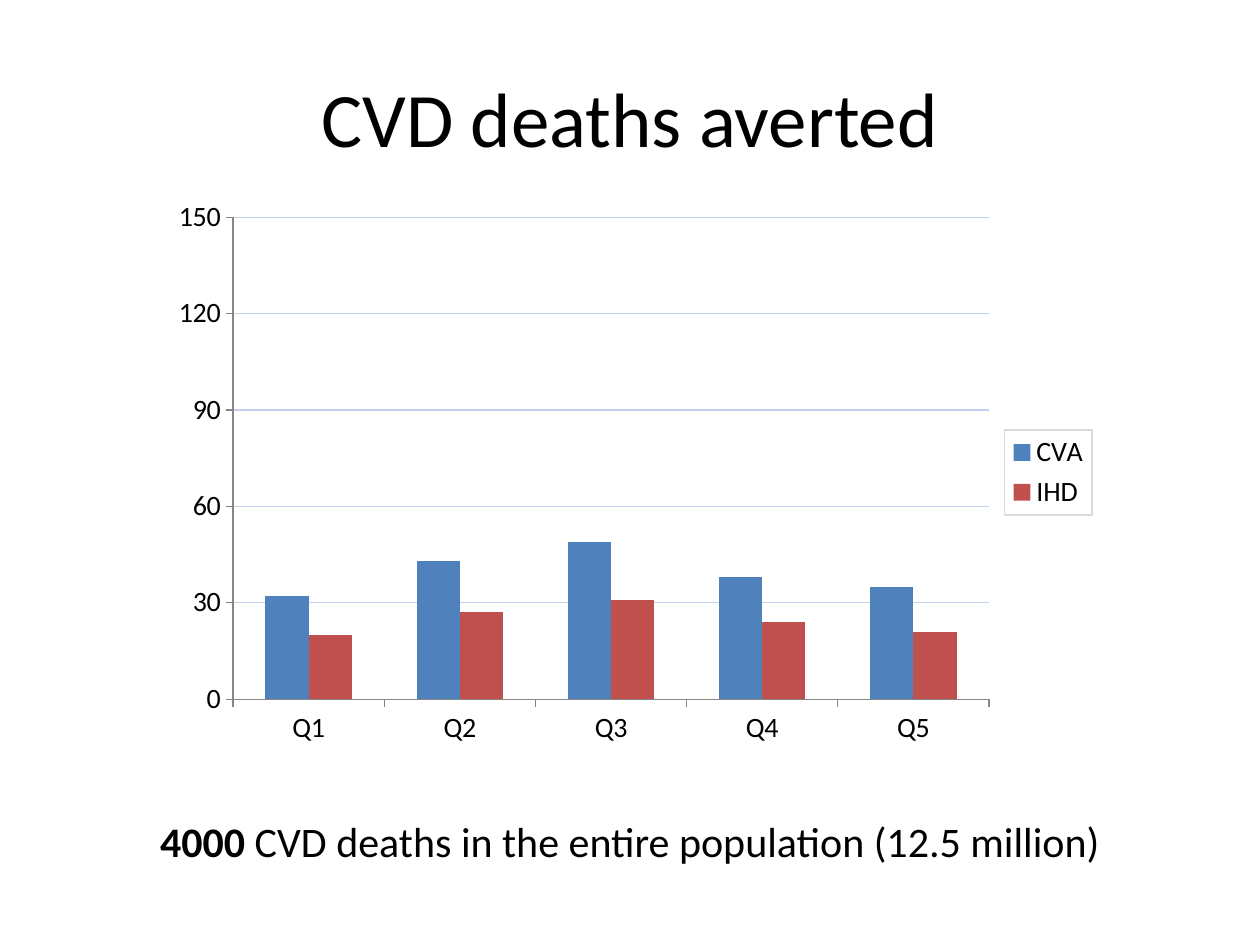
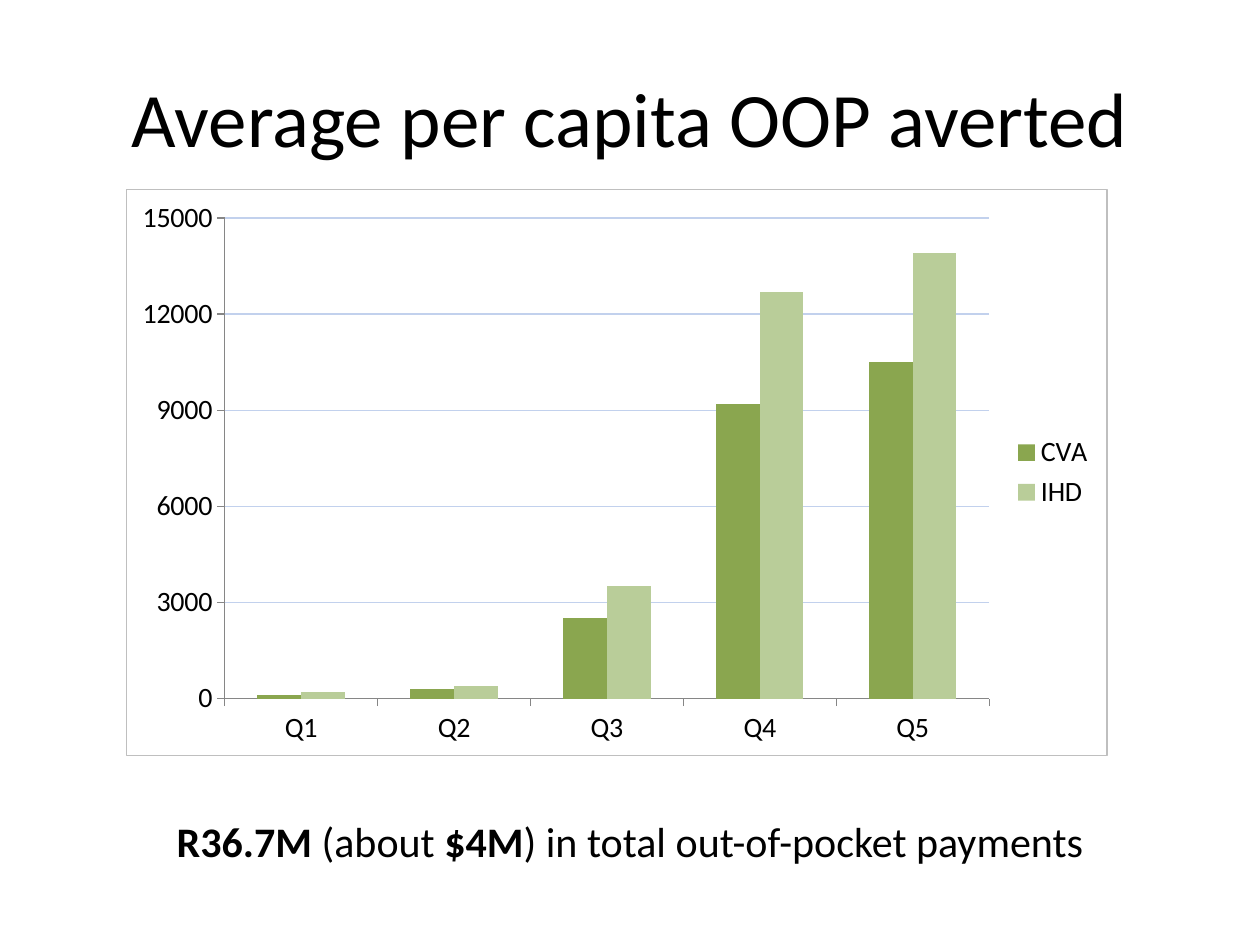
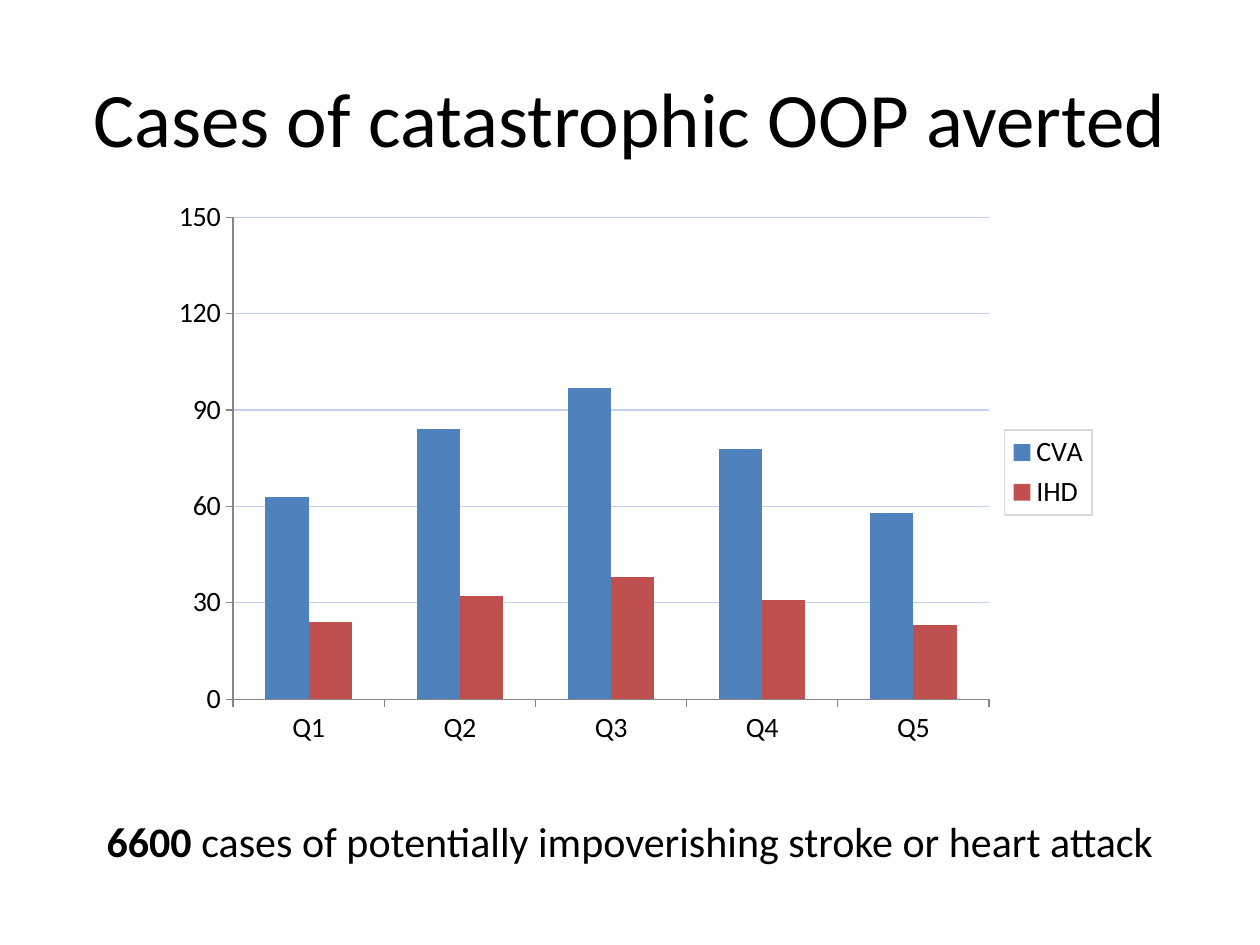
"""Builds three slides of clustered columns on the deaths and costs averted."""
from dataclasses import dataclass

from pptx import Presentation
from pptx.chart.data import CategoryChartData
from pptx.dml.color import RGBColor
from pptx.enum.chart import XL_CHART_TYPE, XL_LEGEND_POSITION, XL_TICK_MARK
from pptx.enum.text import MSO_ANCHOR, MSO_AUTO_SIZE, PP_ALIGN
from pptx.oxml import parse_xml
from pptx.oxml.ns import nsdecls
from pptx.util import Inches, Pt


@dataclass(frozen=True)
class Theme:
    """Colours, font and type sizes of the deck."""
    font: str = "Calibri"
    text: str = "000000"
    axis: str = "868686"
    grid: str = "C2D1ED"
    chart_border: str = "BFBFBF"
    legend_border: str = "D9D9D9"
    case_colors: tuple = ("4F81BD", "C0504D")
    cost_colors: tuple = ("8AA64F", "B9CD99")
    title_size: int = 44
    caption_size: int = 24
    chart_size: int = 16
    line_width: float = 0.75


THEME = Theme()
QUINTILES = ("Q1", "Q2", "Q3", "Q4", "Q5")


class SlideBuilder:
    """Holds the theme and the current slide."""

    def __init__(self, deck, theme):
        """Start with no page."""
        self.deck = deck
        self.theme = theme
        self.page = None

    def new_page(self, title):
        """Add a page with its title."""
        self.page = self.deck.slides.add_slide(self.deck.slide_layouts[5])
        box = self.page.shapes.title
        box.left, box.top = Inches(0.5), Inches(0.3)
        box.width, box.height = Inches(9), Inches(1.25)
        box.text_frame.vertical_anchor = MSO_ANCHOR.MIDDLE
        self.add_spans(box.text_frame, [(title, False)], self.theme.title_size)

    def style_font(self, font, size):
        """Apply the deck's font and text colour."""
        font.name = self.theme.font
        font.size = Pt(size)
        font.color.rgb = RGBColor.from_string(self.theme.text)

    def add_spans(self, frame, spans, size):
        """Fill one centred paragraph with (text, bold) spans."""
        para = frame.paragraphs[0]
        para.alignment = PP_ALIGN.CENTER
        for text, bold in spans:
            span = para.add_run()
            span.text = text
            self.style_font(span.font, size)
            span.font.bold = bold

    def caption(self, width, spans):
        """Add the key finding, centred under the chart."""
        box = self.page.shapes.add_textbox(
            Inches((10 - width) / 2), Inches(6.42), Inches(width), Inches(0.5))
        box.text_frame.word_wrap = False
        box.text_frame.auto_size = MSO_AUTO_SIZE.SHAPE_TO_FIT_TEXT
        self.add_spans(box.text_frame, spans, self.theme.caption_size)

    def outline(self, element, color):
        """Give a chart part no fill and a thin or absent border."""
        line = (f'<a:solidFill><a:srgbClr val="{color}"/></a:solidFill>'
                if color else "<a:noFill/>")
        properties = parse_xml(
            f'<c:spPr {nsdecls("c", "a")}><a:noFill/>'
            f'<a:ln w="{Pt(self.theme.line_width)}">{line}</a:ln></c:spPr>')
        element.xpath("c:txPr")[0].addprevious(properties)

    def place_plot(self, chart, bounds):
        """Set the inner plot area as fractions of the chart."""
        values = "".join(f'<c:{name} val="{value}"/>'
                         for name, value in zip("xywh", bounds))
        plot_area = chart.element.xpath("c:chart/c:plotArea")[0]
        for layout in plot_area.xpath("c:layout"):
            plot_area.remove(layout)
        plot_area.insert(0, parse_xml(
            f'<c:layout {nsdecls("c")}><c:manualLayout><c:layoutTarget val="inner"/>'
            f'<c:xMode val="edge"/><c:yMode val="edge"/>{values}'
            '</c:manualLayout></c:layout>'))

    def style_line(self, line, color):
        """Draw a chart line in the given colour."""
        line.color.rgb = RGBColor.from_string(color)
        line.width = Pt(self.theme.line_width)

    def column_chart(self, left, width, plot_bounds, maximum, strokes, heart,
                     colors, border=None, legend_border=None):
        """Add clustered columns for stroke and heart disease by quintile."""
        data = CategoryChartData(number_format="0")
        data.categories = QUINTILES
        data.add_series("CVA", strokes)
        data.add_series("IHD", heart)
        chart = self.page.shapes.add_chart(
            XL_CHART_TYPE.COLUMN_CLUSTERED, Inches(left), Inches(1.5),
            Inches(width), Inches(4.5), data).chart
        chart.has_title = False
        self.style_font(chart.font, self.theme.chart_size)
        self.outline(chart.element, border)

        plot = chart.plots[0]
        plot.gap_width, plot.overlap, plot.vary_by_categories = 150, 0, False
        for series, color in zip(plot.series, colors):
            series.format.fill.solid()
            series.format.fill.fore_color.rgb = RGBColor.from_string(color)
        for axis in (chart.category_axis, chart.value_axis):
            axis.major_tick_mark = XL_TICK_MARK.OUTSIDE
            axis.minor_tick_mark = XL_TICK_MARK.NONE
            self.style_font(axis.tick_labels.font, self.theme.chart_size)
            self.style_line(axis.format.line, self.theme.axis)
        scale = chart.value_axis
        scale.minimum_scale, scale.maximum_scale = 0, maximum
        scale.major_unit = maximum / 5
        scale.has_major_gridlines = True
        self.style_line(scale.major_gridlines.format.line, self.theme.grid)
        self.place_plot(chart, plot_bounds)

        chart.has_legend = True
        chart.legend.position = XL_LEGEND_POSITION.RIGHT
        chart.legend.include_in_layout = False
        self.style_font(chart.legend.font, self.theme.chart_size)
        self.outline(chart.element.xpath("c:chart/c:legend")[0], legend_border)

    def case_chart(self, strokes, heart):
        """Add a chart of case counts on the shared scale."""
        self.column_chart(1.25, 7.5, (0.08, 0.05, 0.8, 0.85), 150, strokes, heart,
                          self.theme.case_colors,
                          legend_border=self.theme.legend_border)


def main():
    """Build and save the deck."""
    deck = Presentation()
    deck.slide_width, deck.slide_height = Inches(10), Inches(7.5)
    builder = SlideBuilder(deck, THEME)

    builder.new_page("CVD deaths averted")
    builder.case_chart((32, 43, 49, 38, 35), (20, 27, 31, 24, 21))
    builder.caption(7.73, [
        ("4000", True),
        (" CVD deaths in the entire population (12.5 million)", False)])

    builder.new_page("Average per capita OOP averted")
    builder.column_chart(1, 7.79, (0.1, 0.05, 0.78, 0.85), 15000,
                         (100, 300, 2500, 9200, 10500),
                         (200, 400, 3500, 12700, 13900),
                         THEME.cost_colors, border=THEME.chart_border)
    builder.caption(7.43, [
        ("R36.7M", True), (" (about ", False), ("$4M", True),
        (") in total out-of-pocket payments", False)])

    builder.new_page("Cases of catastrophic OOP averted")
    builder.case_chart((63, 84, 97, 78, 58), (24, 32, 38, 31, 23))
    builder.caption(8.61, [
        ("6600", True),
        (" cases of potentially impoverishing stroke or heart attack", False)])

    deck.save("out.pptx")


if __name__ == "__main__":
    main()
